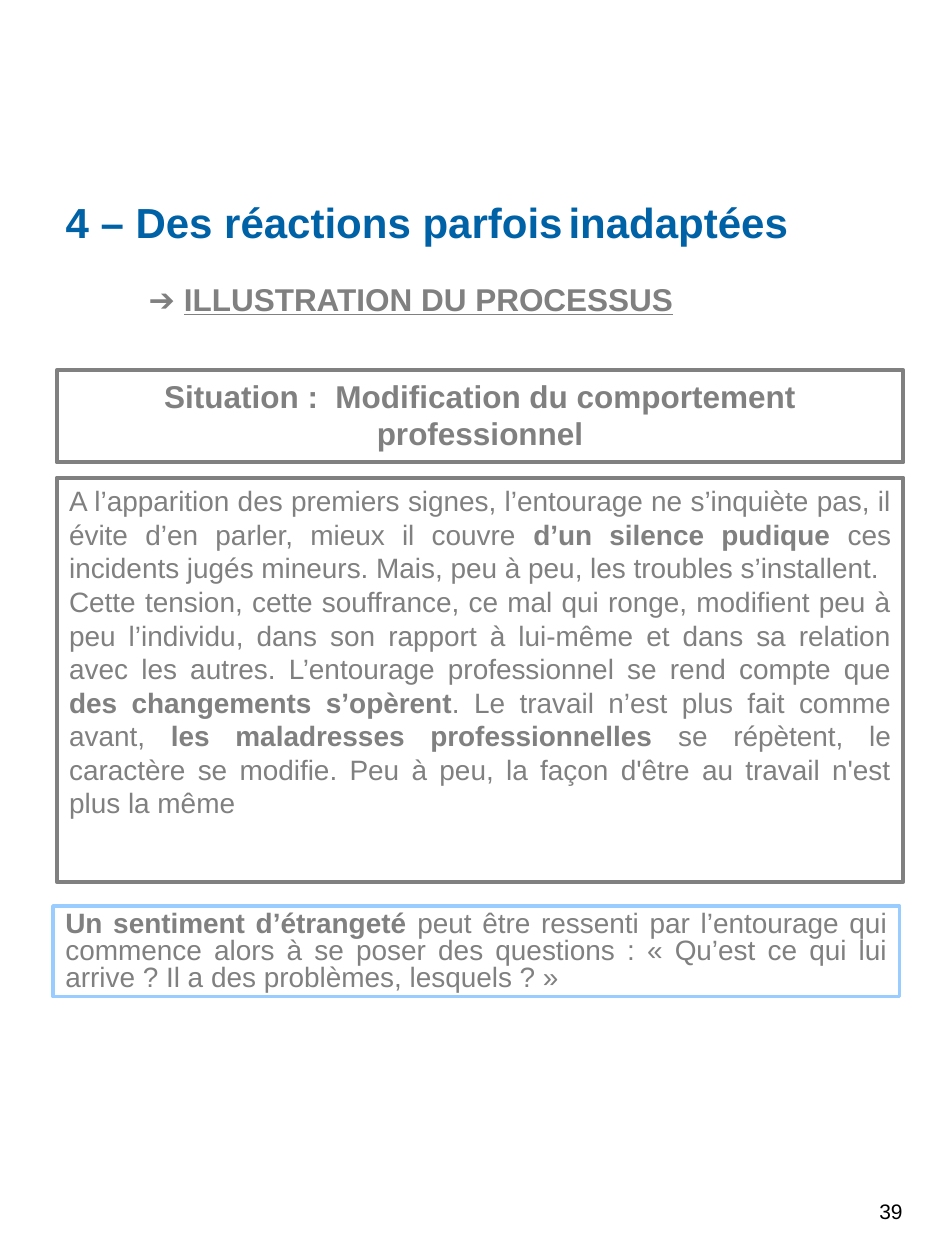
from pptx import Presentation
from pptx import util as u
from pptx.dml.color import RGBColor
from pptx.enum import shapes, text

GREY, BLUE, SKY, BLACK = "808080", "0062A6", "99CCFF", "000000"
LEFT, CENTER, JUST = text.PP_ALIGN.LEFT, text.PP_ALIGN.CENTER, text.PP_ALIGN.JUSTIFY

SIGNS = [
    [("A l’apparition des premiers signes, l’entourage ne s’inquiète pas, il évite "
      "d’en parler, mieux il couvre ", False),
     ("d’un silence pudique", True),
     (" ces incidents jugés mineurs. Mais, peu à peu, les troubles s’installent.", False)],
    [("Cette tension, cette souffrance, ce mal qui ronge, modifient peu à peu l’individu, "
      "dans son rapport à lui-même et dans sa relation avec les autres. L’entourage "
      "professionnel se rend compte que ", False),
     ("des changements s’opèrent", True),
     (". Le travail n’est plus fait comme avant, ", False),
     ("les maladresses professionnelles", True),
     (" se répètent, le caractère se modifie. Peu à peu, la façon d'être au travail "
      "n'est plus la même", False)],
]
DOUBT = [
    [("Un sentiment d’étrangeté", True),
     (" peut être ressenti par l’entourage qui commence alors à se poser des questions : "
      "« Qu’est ce qui lui arrive ? Il a des problèmes, lesquels ? »", False)],
]


def color(code):
    return RGBColor.from_string(code)


def box(x, y, w, h):
    return [u.Inches(v) for v in (x, y, w, h)]


def style(para, size, code, align=LEFT, bold=None):
    para.alignment = align
    font = para.font
    font.name, font.size, font.bold = "Arial", u.Pt(size), bold
    font.color.rgb = color(code)


def add_run(para, words, bold=None):
    run = para.add_run()
    run.text = words
    if bold is not None:
        run.font.bold = bold
    return run


def frame(shape):
    body = shape.text_frame
    body.word_wrap = True
    body.auto_size = text.MSO_AUTO_SIZE.NONE
    body.vertical_anchor = text.MSO_ANCHOR.TOP
    return body


def add_title(slide, area):
    title = slide.shapes.title
    title.left, title.top, title.width, title.height = area
    para = frame(title).paragraphs[0]
    style(para, 24, BLUE, JUST, True)
    add_run(para, "4 – Des réactions parfois")
    add_run(para, " ").font.size = u.Pt(12)
    add_run(para, "inadaptées")


def add_label(slide, area):
    body = frame(slide.shapes.add_textbox(*area))
    body.margin_left = u.Inches(0.79)
    para = body.paragraphs[0]
    style(para, 18, GREY)
    add_run(para, "➔ ")
    add_run(para, "ILLUSTRATION DU PROCESSUS", True).font.underline = True


def add_panel(slide, area, paras, edge, width, size, align, space=None):
    panel = slide.shapes.add_shape(shapes.MSO_SHAPE.RECTANGLE, *area)
    panel.shadow.inherit = False
    panel.fill.background()
    panel.line.color.rgb = color(edge)
    panel.line.width = u.Pt(width)
    body = frame(panel)
    for i, runs in enumerate(paras):
        para = body.add_paragraph() if i else body.paragraphs[0]
        style(para, size, GREY, align)
        para.line_spacing = space
        for words, bold in runs:
            add_run(para, words, bold)


def add_number(slide, area):
    para = frame(slide.shapes.add_textbox(*area)).paragraphs[0]
    style(para, 12, BLACK)
    add_run(para, "39")


def main():
    deck = Presentation()
    deck.slide_width, deck.slide_height = u.Inches(7.5), u.Inches(10)
    slide = deck.slides.add_slide(deck.slide_layouts[5])
    topic = [[("Situation :  Modification du comportement professionnel", True)]]

    add_number(slide, box(6.88, 9.46, 0.62, 0.54))
    add_panel(slide, box(0.45, 3.79, 6.72, 3.21), SIGNS, GREY, 2.25, 16, JUST)
    add_panel(slide, box(0.45, 2.94, 6.72, 0.73), topic, GREY, 2.25, 18, CENTER)
    add_panel(slide, box(0.42, 7.19, 6.72, 0.72), DOUBT, SKY, 2, 16, JUST, 0.8)
    add_label(slide, box(0.39, 2.17, 6.61, 0.4))
    add_title(slide, box(0.42, 1.51, 6.96, 0.5))
    deck.save("out.pptx")


if __name__ == "__main__":
    main()
